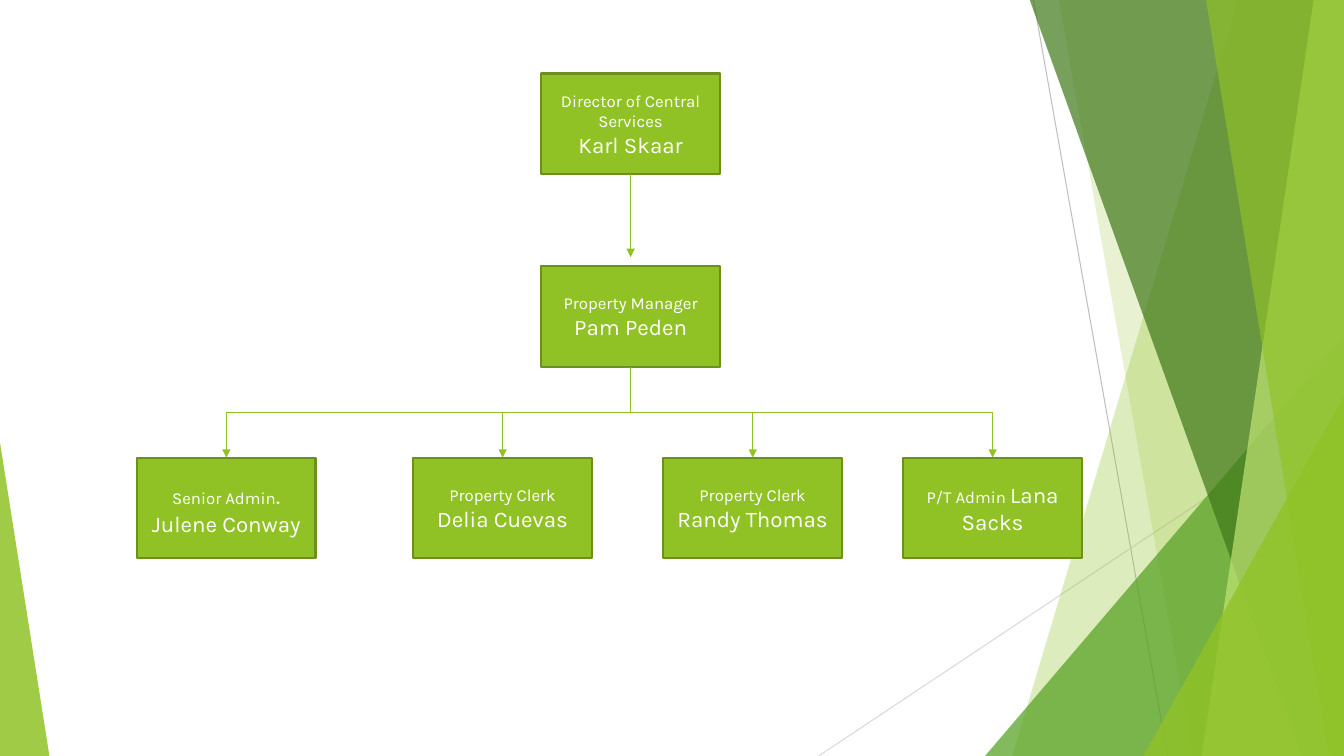
from lxml import etree
from pptx import Presentation
from pptx.dml.color import RGBColor
from pptx.enum.shapes import MSO_CONNECTOR, MSO_SHAPE
from pptx.enum.text import MSO_ANCHOR, PP_ALIGN
from pptx.oxml.ns import qn
from pptx.util import Inches, Pt

STRAIGHT, ELBOW = MSO_CONNECTOR.STRAIGHT, MSO_CONNECTOR.ELBOW
RECTANGLE, TRIANGLE = MSO_SHAPE.RECTANGLE, MSO_SHAPE.ISOSCELES_TRIANGLE
CENTER, MIDDLE = PP_ALIGN.CENTER, MSO_ANCHOR.MIDDLE

GREEN = RGBColor(0x90, 0xC2, 0x26)
BORDER = RGBColor(0x6B, 0x90, 0x1C)
LEAF = RGBColor(0x54, 0xA0, 0x21)
FOREST = RGBColor(0x3F, 0x78, 0x19)
LIME = RGBColor(0xC0, 0xE4, 0x74)
WHITE = RGBColor(0xFF, 0xFF, 0xFF)
GRAY = RGBColor(0xBF, 0xBF, 0xBF)
LIGHT_GRAY = RGBColor(0xD9, 0xD9, 0xD9)
FONT = "Karla"

SLIDE_W, SLIDE_H = 13.33, 7.5
BAND_TOP = -0.01
BOX_W, BOX_H = 1.77, 1.0
STAFF_TOP = 4.54
ARROW_END = 2.55

RAYS = [
    ((10.25, 0), (11.58, SLIDE_H), GRAY),
    ((SLIDE_W, 4.03), (8.12, SLIDE_H), LIGHT_GRAY),
]
# kind, geometry, colour, opacity
FACETS = [
    ("band", (12.28, 10.04), GREEN, 30),
    ("band", (10.5, 11.83), GREEN, 20),
    ("triangle", (9.77, 3.33, 3.56, 1), LEAF, 72),
    ("band", (10.21, 12.91), FOREST, 70),
    ("band", (13.03, 11.92), LIME, 70),
    ("band", (11.96, 13.18), GREEN, 65),
    ("triangle", (11.34, 3.93, 1.99, 1), GREEN, 80),
    ("triangle", (0, 4.39, 0.49, 0), GREEN, 85),
]
DIRECTOR = (5.37, 0.73, [[("Director of Central Services", 12)], [("Karl Skaar", 16)]])
MANAGER = (5.37, 2.64, [[("Property Manager", 12)], [("Pam Peden", 16)]])
STAFF = [
    (1.36, STAFF_TOP, [[("Senior Admin", 12), (".", 18)], [("Julene Conway", 16)]]),
    (4.1, STAFF_TOP, [[("Property Clerk ", 12), ("Delia Cuevas", 16)]]),
    (6.58, STAFF_TOP, [[("Property Clerk ", 12), ("Randy Thomas", 16)]]),
    (8.96, STAFF_TOP, [[("P/T Admin ", 12), ("Lana Sacks", 16)]]),
]


def add_facet(shapes, kind, geometry, color, opacity):
    if kind == "band":
        top_x, bottom_x = geometry
        corners = [(SLIDE_W, BAND_TOP), (SLIDE_W, SLIDE_H), (bottom_x, SLIDE_H)]
        outline = shapes.build_freeform(Inches(top_x), Inches(BAND_TOP))
        outline.add_line_segments([(Inches(x), Inches(y)) for x, y in corners], close=True)
        facet = outline.convert_to_shape()
    else:
        left, top, width, apex = geometry
        facet = shapes.add_shape(
            TRIANGLE, Inches(left), Inches(top), Inches(width), Inches(SLIDE_H - top)
        )
        facet.adjustments[0] = apex
    facet.shadow.inherit = False
    facet.fill.solid()
    facet.fill.fore_color.rgb = color
    facet.line.fill.background()
    tint = facet._element.spPr.find(qn("a:solidFill")).find(qn("a:srgbClr"))
    etree.SubElement(tint, qn("a:alpha")).set("val", str(opacity * 1000))


def add_box(shapes, left, top, paragraphs):
    box = shapes.add_shape(RECTANGLE, Inches(left), Inches(top), Inches(BOX_W), Inches(BOX_H))
    box.shadow.inherit = False
    box.fill.solid()
    box.fill.fore_color.rgb = GREEN
    box.line.color.rgb = BORDER
    box.line.width = Pt(1.5)
    frame = box.text_frame
    frame.word_wrap = True
    frame.vertical_anchor = MIDDLE
    for i, runs in enumerate(paragraphs):
        paragraph = frame.add_paragraph() if i else frame.paragraphs[0]
        paragraph.alignment = CENTER
        for text, size in runs:
            run = paragraph.add_run()
            run.text = text
            run.font.name = FONT
            run.font.size = Pt(size)
            run.font.color.rgb = WHITE
    return box


def add_line(shapes, kind, start, end, color, width, arrow=False):
    line = shapes.add_connector(kind, *(Inches(v) for v in (*start, *end)))
    line.line.color.rgb = color
    line.line.width = Pt(width)
    if arrow:
        etree.SubElement(line.line._get_or_add_ln(), qn("a:tailEnd")).set("type", "triangle")
    etree.SubElement(line._element.spPr, qn("a:effectLst"))
    return line


def add_branch(shapes, manager, employee):
    branch = add_line(shapes, ELBOW, (0, 0), (1, 1), GREEN, 1, arrow=True)
    branch.begin_connect(manager, 2)
    branch.end_connect(employee, 0)
    start_x = manager.left + manager.width // 2
    start_y = manager.top + manager.height
    end_x = employee.left + employee.width // 2
    drop, span = employee.top - start_y, abs(end_x - start_x)
    branch.left = (start_x + end_x - drop) // 2
    branch.top = (start_y + employee.top - span) // 2
    branch.width, branch.height = drop, span
    turn = branch._element.spPr.find(qn("a:xfrm"))
    to_right = end_x > start_x
    turn.set("rot", str((270 if to_right else 90) * 60000))
    turn.set("flipH", "1" if to_right else "0")
    turn.set("flipV", "0")


def main():
    prs = Presentation()
    prs.slide_width, prs.slide_height = Inches(SLIDE_W), Inches(SLIDE_H)
    shapes = prs.slides.add_slide(prs.slide_layouts[6]).shapes

    for start, end, color in RAYS:
        add_line(shapes, STRAIGHT, start, end, color, 0.75)
    for facet in FACETS:
        add_facet(shapes, *facet)

    director = add_box(shapes, *DIRECTOR)
    manager = add_box(shapes, *MANAGER)
    employees = [add_box(shapes, *person) for person in STAFF]

    center_x = DIRECTOR[0] + BOX_W / 2
    report = add_line(
        shapes, STRAIGHT, (center_x, DIRECTOR[1] + BOX_H), (center_x, ARROW_END), GREEN, 1, arrow=True
    )
    report.begin_connect(director, 2)
    for employee in employees:
        add_branch(shapes, manager, employee)

    prs.save("out.pptx")


if __name__ == "__main__":
    main()
